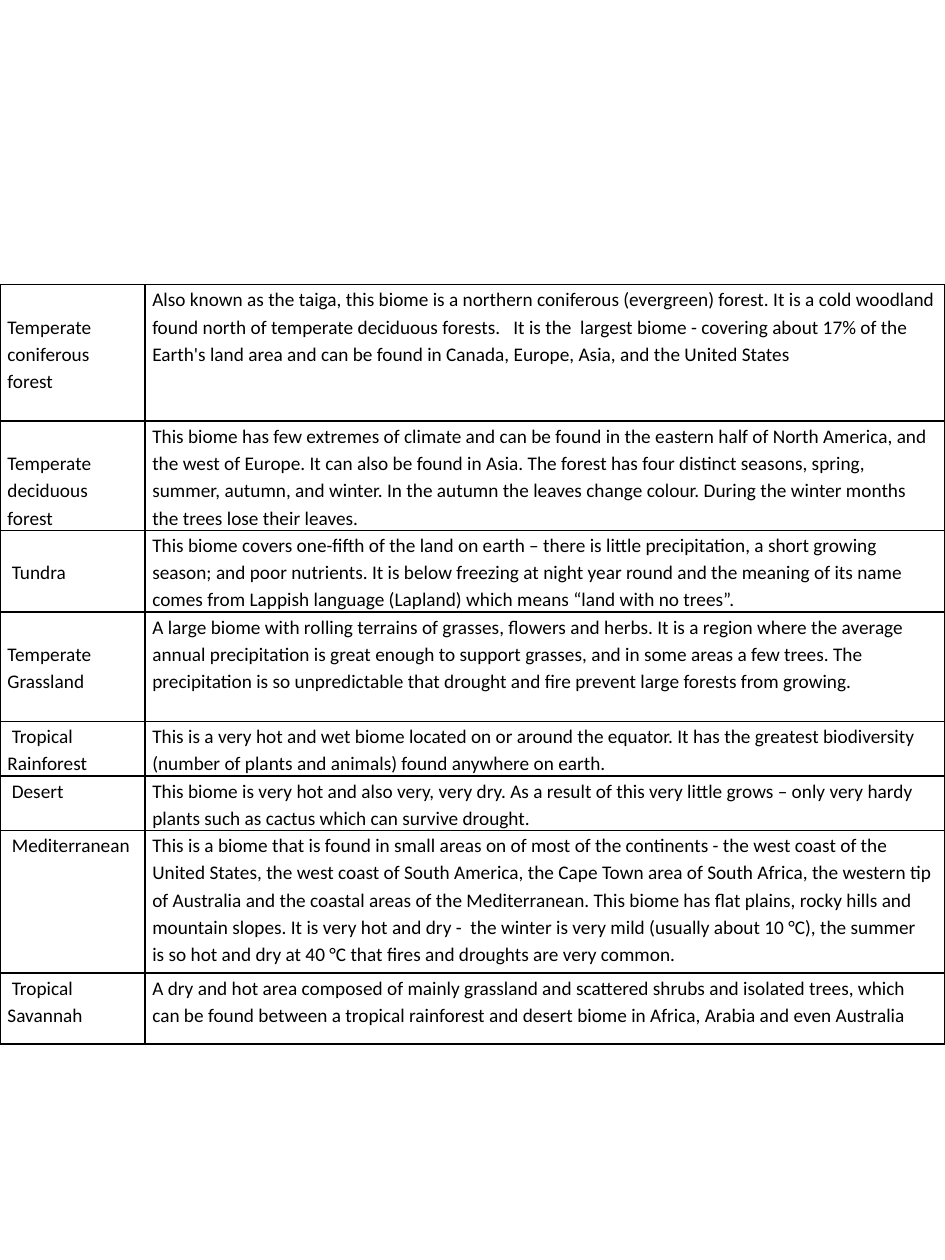
"""Build a one-page table that describes the main biomes of the world."""
from lxml.etree import SubElement
from pptx import Presentation
from pptx.dml.color import RGBColor as Rgb
from pptx.oxml.ns import qn
from pptx.util import Cm, Pt

COLORS = {"ink": "000000"}
FONT = "Calibri"
PAGE_SIZE = (19.05, 25.4)
TABLE_TOP = 5.74
COLUMN_WIDTHS = (2.92, 16.13)
LINE_HEIGHT = 0.55
SIDE_MARGIN = 0.15

# name, description, row height in lines, lines left free above the name
BIOMES = [
    ("Temperate coniferous forest",
     "Also known as the taiga, this biome is a northern coniferous (evergreen) forest. "
     "It is a cold woodland found north of temperate deciduous forests.   It is the  largest "
     "biome - covering about 17% of the Earth's land area and can be found in Canada, Europe, "
     "Asia, and the United States", 5, 1),
    ("Temperate deciduous forest",
     "This biome has few extremes of climate and can be found in the eastern half of North "
     "America, and the west of Europe. It can also be found in Asia. The forest has four "
     "distinct seasons, spring, summer, autumn, and winter. In the autumn the leaves change "
     "colour. During the winter months the trees lose their leaves.", 4, 1),
    (" Tundra",
     "This biome covers one-fifth of the land on earth – there is little precipitation, a "
     "short growing season; and poor nutrients. It is below freezing at night year round and "
     "the meaning of its name comes from Lappish language (Lapland) which means “land with no "
     "trees”.", 3, 1),
    ("Temperate Grassland",
     "A large biome with rolling terrains of grasses, flowers and herbs. It is a region where "
     "the average annual precipitation is great enough to support grasses, and in some areas a "
     "few trees. The precipitation is so unpredictable that drought and fire prevent large "
     "forests from growing.", 4, 1),
    (" Tropical Rainforest",
     "This is a very hot and wet biome located on or around the equator. It has the greatest "
     "biodiversity (number of plants and animals) found anywhere on earth.", 2, 0),
    (" Desert",
     "This biome is very hot and also very, very dry. As a result of this very little grows – "
     "only very hardy plants such as cactus which can survive drought.", 2, 0),
    (" Mediterranean",
     "This is a biome that is found in small areas on of most of the continents - the west "
     "coast of the United States, the west coast of South America, the Cape Town area of South "
     "Africa, the western tip of Australia and the coastal areas of the Mediterranean. This "
     "biome has flat plains, rocky hills and mountain slopes. It is very hot and dry -  the "
     "winter is very mild (usually about 10 °C), the summer  is so hot and dry at 40 °C that "
     "fires and droughts are very common.", 5.22, 0),
    (" Tropical Savannah",
     "A dry and hot area composed of mainly grassland and scattered shrubs and isolated trees, "
     "which can be found between a tropical rainforest and desert biome in Africa, Arabia and "
     "even Australia", 2.6, 0),
]


def draw_borders(cell, color, width):
    """Give the cell a solid line on all four sides."""
    properties = cell._tc.get_or_add_tcPr()
    for index, side in enumerate(("lnL", "lnR", "lnT", "lnB")):
        line = SubElement(properties, qn(f"a:{side}"), w=str(Pt(width)))
        fill = SubElement(line, qn("a:solidFill"))
        SubElement(fill, qn("a:srgbClr"), val=color)
        properties.insert(index, line)


def write_cell(cell, text, size=11, color=COLORS["ink"], top=0):
    """Write one paragraph into a bordered, unfilled cell."""
    cell.fill.background()
    draw_borders(cell, color, 1)
    cell.margin_left = cell.margin_right = Cm(SIDE_MARGIN)
    cell.margin_top, cell.margin_bottom = Cm(top), 0
    para = cell.text_frame.paragraphs[0]
    para.line_spacing = 1.15
    span = para.add_run()
    span.text = text
    span.font.name, span.font.size = FONT, Pt(size)
    span.font.color.rgb = Rgb.from_string(color)


def main():
    """Lay out the biome table and save the deck."""
    deck = Presentation()
    deck.slide_width, deck.slide_height = map(Cm, PAGE_SIZE)
    page = deck.slides.add_slide(deck.slide_layouts[6])
    height = sum(lines for _, _, lines, _ in BIOMES) * LINE_HEIGHT
    table = page.shapes.add_table(len(BIOMES), len(COLUMN_WIDTHS), 0, Cm(TABLE_TOP),
                                  Cm(sum(COLUMN_WIDTHS)), Cm(height)).table
    table.first_row = table.horz_banding = False
    for column, width in zip(table.columns, COLUMN_WIDTHS):
        column.width = Cm(width)
    for row, (name, description, lines, lines_above) in zip(table.rows, BIOMES):
        row.height = Cm(lines * LINE_HEIGHT)
        write_cell(row.cells[0], name, top=lines_above * LINE_HEIGHT)
        write_cell(row.cells[1], description)
    deck.save("out.pptx")


if __name__ == "__main__":
    main()
